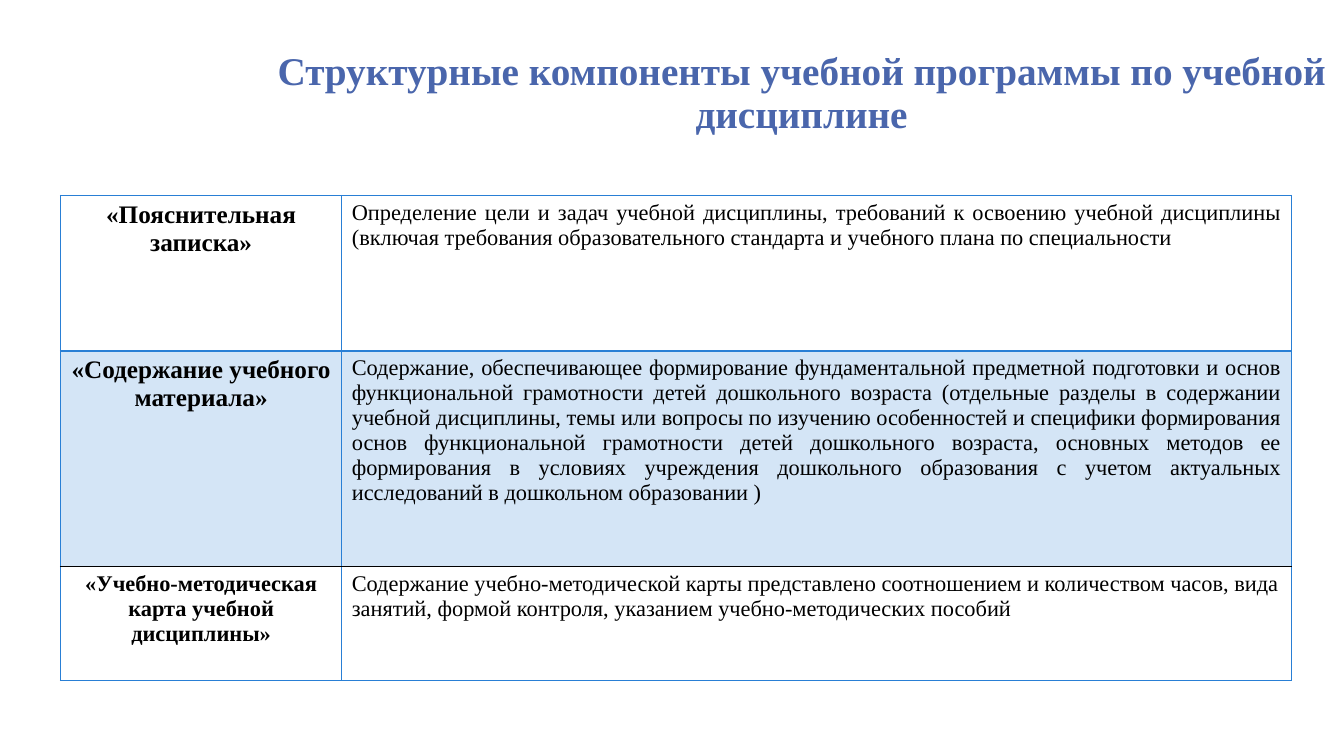
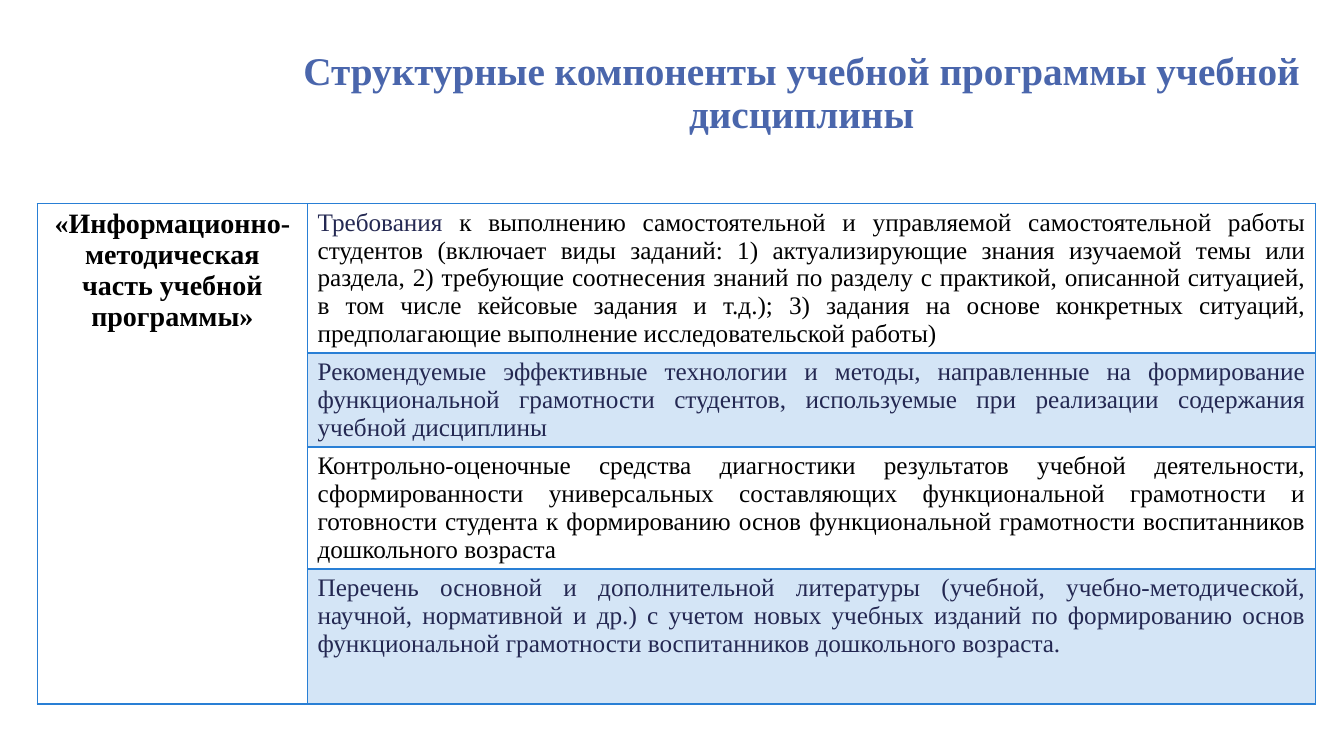
from lxml import etree
from pptx import Presentation
from pptx.dml.color import RGBColor
from pptx.enum.text import MSO_ANCHOR, MSO_AUTO_SIZE, PP_ALIGN
from pptx.oxml.ns import qn
from pptx.util import Pt

PX = 9144  # EMU per px, 100 px to the inch
FONT = "Times New Roman"
TITLE_BLUE = RGBColor(0x4A, 0x66, 0xAC)
LINE_BLUE = RGBColor(0x29, 0x7F, 0xD5)
NAVY = RGBColor(0x24, 0x28, 0x52)
BLACK = RGBColor(0, 0, 0)
NO_STYLE = "{2D5ABB26-0587-4C30-8999-92F81FD0307C}"
CENTER, JUSTIFY, LEFT = PP_ALIGN.CENTER, PP_ALIGN.JUSTIFY, PP_ALIGN.LEFT
TITLE_BOX = (257, 21, 1076, 145)
THIN, THICK, DARK = (LINE_BLUE, 1), (LINE_BLUE, 2), (BLACK, 1)

# Content: a cell is (alignment, size, bold, [(text, colour), ...]);
# None continues the cell above; "under" is the rule below each row
SLIDES = [
    {
        "title": "Структурные компоненты учебной программы по учебной дисциплине",
        "at": (60, 194), "cols": (279, 942), "rows": (154, 214, 113),
        "under": (THICK, DARK, THIN),
        "cells": [
            [(CENTER, 18, True, [("«Пояснительная записка»", BLACK)]),
             (JUSTIFY, 16, False, [(
                 "Определение цели и задач учебной дисциплины, требований к освоению "
                 "учебной дисциплины (включая требования образовательного стандарта и "
                 "учебного плана по специальности", BLACK)])],
            [(CENTER, 18, True, [("«Содержание учебного материала»", BLACK)]),
             (JUSTIFY, 16, False, [(
                 "Содержание, обеспечивающее формирование фундаментальной предметной "
                 "подготовки и основ функциональной грамотности детей дошкольного возраста "
                 "(отдельные разделы в содержании учебной дисциплины, темы или вопросы по "
                 "изучению особенностей и специфики формирования основ функциональной "
                 "грамотности детей дошкольного возраста, основных методов ее формирования "
                 "в условиях учреждения дошкольного образования с учетом актуальных "
                 "исследований в дошкольном образовании )", BLACK)])],
            [(CENTER, 16, True, [("«Учебно-методическая карта учебной дисциплины»", BLACK)]),
             (LEFT, 16, False, [(
                 "Содержание учебно-методической карты представлено соотношением и "
                 "количеством часов, вида занятий, формой контроля, указанием "
                 "учебно-методических пособий", BLACK)])],
        ],
    },
    {
        "title": "Структурные компоненты учебной программы учебной дисциплины",
        "at": (37, 202), "cols": (268, 1000), "rows": (148, 93, 121, 134),
        "under": (THICK, THIN, THIN, THIN),
        "cells": [
            [(CENTER, 20, True, [("«Информационно-методическая часть учебной программы»", BLACK)]),
             (JUSTIFY, 18, False, [("Требования ", NAVY), (
                 "к выполнению самостоятельной и управляемой самостоятельной работы "
                 "студентов (включает виды заданий: 1) актуализирующие знания изучаемой "
                 "темы или раздела, 2) требующие соотнесения знаний по разделу с практикой, "
                 "описанной ситуацией, в том числе кейсовые задания и т.д.); 3) задания на "
                 "основе конкретных ситуаций, предполагающие выполнение исследовательской "
                 "работы)", BLACK)])],
            [None, (JUSTIFY, 18, False, [(
                "Рекомендуемые эффективные технологии и методы, направленные на "
                "формирование функциональной грамотности студентов, используемые при "
                "реализации содержания учебной дисциплины", NAVY)])],
            [None, (JUSTIFY, 18, False, [(
                "Контрольно-оценочные средства диагностики результатов учебной "
                "деятельности, сформированности универсальных составляющих функциональной "
                "грамотности и готовности студента к формированию основ функциональной "
                "грамотности воспитанников дошкольного возраста", BLACK)])],
            [None, (JUSTIFY, 18, False, [(
                "Перечень основной и дополнительной литературы (учебной, "
                "учебно-методической, научной, нормативной и др.) с учетом новых учебных "
                "изданий по формированию основ функциональной грамотности воспитанников "
                "дошкольного возраста.", NAVY)])],
        ],
    },
]


def add_run(p, text, size, bold, color):
    r = p.add_run()
    r.text = text
    r.font.name, r.font.size, r.font.bold = FONT, Pt(size), bold
    r.font.color.rgb = color


def add_title(s, text):
    sp = s.shapes.title
    sp.left, sp.top, sp.width, sp.height = (v * PX for v in TITLE_BOX)
    tf = sp.text_frame
    tf.word_wrap, tf.auto_size = True, MSO_AUTO_SIZE.NONE
    tf.vertical_anchor = MSO_ANCHOR.MIDDLE
    p = tf.paragraphs[0]
    p.alignment, p.line_spacing = CENTER, 0.9
    add_run(p, text, 28, True, TITLE_BLUE)


def fill_cell(cell, banded):
    if not banded:
        cell.fill.background()
        return
    cell.fill.solid()
    cell.fill.fore_color.rgb = LINE_BLUE
    clr = cell._tc.tcPr.find(".//" + qn("a:srgbClr"))
    etree.SubElement(clr, qn("a:alpha"), val="20000")


def set_borders(cell, borders):
    # Border elements come before the fill, in the order L, R, T, B
    tcPr = cell._tc.get_or_add_tcPr()
    for i, (side, (color, width)) in enumerate(borders.items()):
        ln = etree.Element(qn("a:ln" + side), w=str(Pt(width)))
        fill = etree.SubElement(ln, qn("a:solidFill"))
        etree.SubElement(fill, qn("a:srgbClr"), val=str(color))
        tcPr.insert(i, ln)


def add_component_table(s, data):
    cols, rows, under = data["cols"], data["rows"], data["under"]
    box = (*data["at"], sum(cols), sum(rows))
    table = s.shapes.add_table(len(rows), len(cols), *(v * PX for v in box)).table
    table.first_row = table.horz_banding = False
    table._tbl.tblPr.find(qn("a:tableStyleId")).text = NO_STYLE
    for col, width in zip(table.columns, cols):
        col.width = width * PX
    for row, height in zip(table.rows, rows):
        row.height = height * PX
    if data["cells"][-1][0] is None:
        table.cell(0, 0).merge(table.cell(len(rows) - 1, 0))

    for i, line in enumerate(data["cells"]):
        for j, content in enumerate(line):
            cell = table.cell(i, j)
            fill_cell(cell, i % 2 == 1 and content is not None)
            borders = {"L": THIN, "R": THIN}
            if content:
                borders.update(T=under[i - 1] if i else THIN, B=under[i])
                align, size, bold, runs = content
                p = cell.text_frame.paragraphs[0]
                p.alignment = align
                for text, color in runs:
                    add_run(p, text, size, bold, color)
            set_borders(cell, borders)


def main():
    prs = Presentation()
    prs.slide_width, prs.slide_height = 1333 * PX, 750 * PX
    for data in SLIDES:
        s = prs.slides.add_slide(prs.slide_layouts[5])
        add_title(s, data["title"])
        add_component_table(s, data)
    prs.save("out.pptx")


if __name__ == "__main__":
    main()
